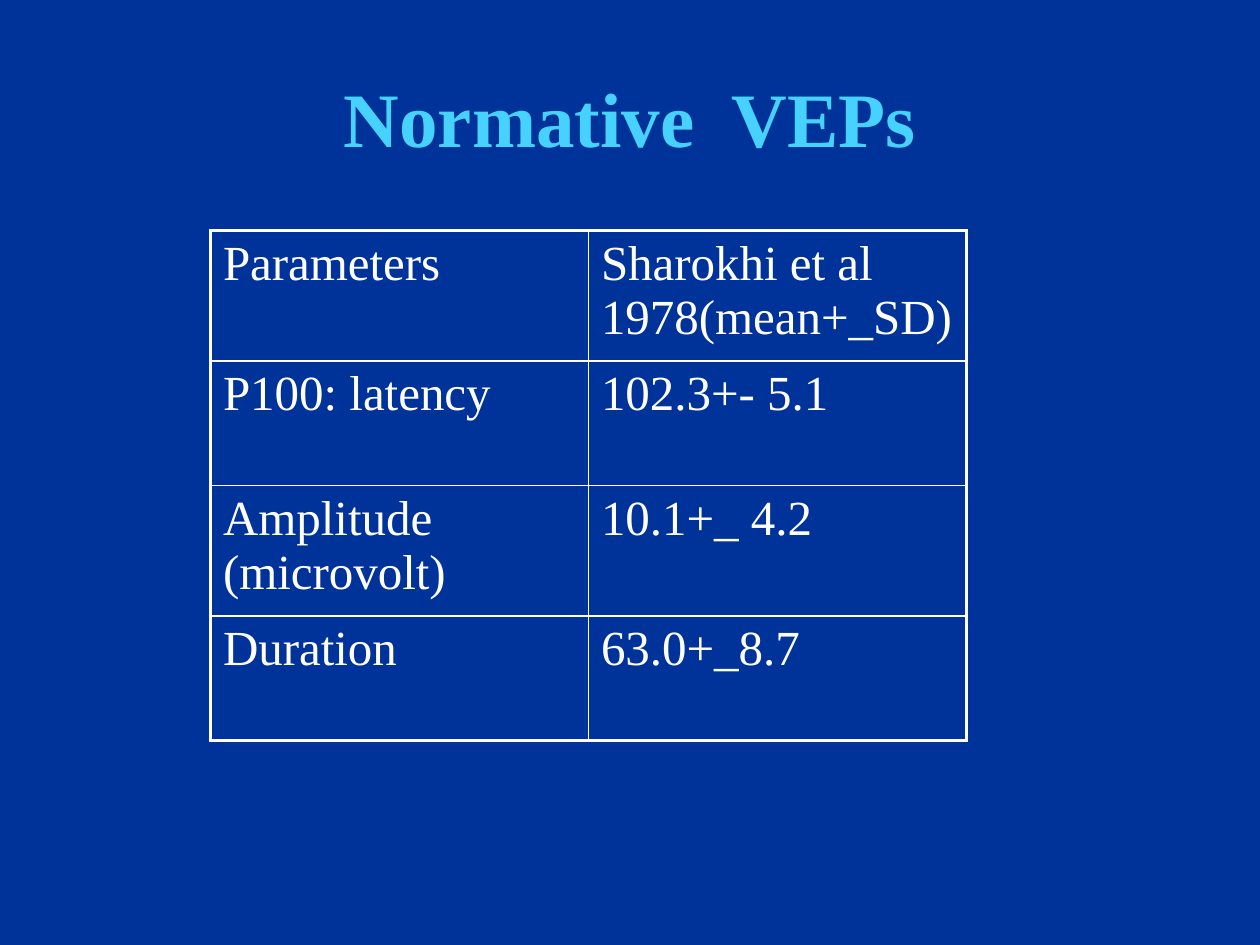
"""Build the slide with the table of normative VEP values."""
import pptx
import pptx.dml.color
import pptx.enum.text
import pptx.util
import lxml.etree
from pptx.oxml.ns import qn

TITLE = "Normative  VEPs"
ROWS = [
    ("Parameters", "Sharokhi et al 1978(mean+_SD)"),
    ("P100: latency", "102.3+- 5.1"),
    ("Amplitude (microvolt)", "10.1+_ 4.2"),
    ("Duration", "63.0+_8.7"),
]
FONT = "Times New Roman"
NAVY = pptx.dml.color.RGBColor(0x00, 0x33, 0x99)
SKY = pptx.dml.color.RGBColor(0x47, 0xD1, 0xFF)
WHITE = pptx.dml.color.RGBColor(0xFF, 0xFF, 0xFF)
OUTER_WIDTH, INNER_WIDTH = 2.25, 1
COLUMN_WIDTH, ROW_HEIGHT = 3, 0.99
TABLE_LEFT, TABLE_TOP = 1.67, 1.83


def add_run(paragraph, text, size, color, bold=False):
    run = paragraph.add_run()
    run.text = text
    run.font.name = FONT
    run.font.size = pptx.util.Pt(size)
    run.font.bold = bold
    run.font.color.rgb = color


def add_border(cell, side, width):
    properties = cell._tc.get_or_add_tcPr()
    line = lxml.etree.SubElement(properties, qn(f"a:ln{side}"), w=str(pptx.util.Pt(width)))
    fill = lxml.etree.SubElement(line, qn("a:solidFill"))
    lxml.etree.SubElement(fill, qn("a:srgbClr"), val=str(WHITE))


def add_title(slide):
    box = slide.shapes.add_textbox(*map(pptx.util.Inches, (0.5, 0.3, 9, 1.25)))
    frame = box.text_frame
    frame.word_wrap = True
    frame.vertical_anchor = pptx.enum.text.MSO_ANCHOR.MIDDLE
    paragraph = frame.paragraphs[0]
    paragraph.alignment = pptx.enum.text.PP_ALIGN.CENTER
    add_run(paragraph, TITLE, 44, SKY, bold=True)


def add_values_table(slide):
    row_count, column_count = len(ROWS), len(ROWS[0])
    bounds = (TABLE_LEFT, TABLE_TOP, column_count * COLUMN_WIDTH, row_count * ROW_HEIGHT)
    table = slide.shapes.add_table(row_count, column_count, *map(pptx.util.Inches, bounds)).table
    table.first_row = table.horz_banding = False
    for row, texts in enumerate(ROWS):
        for column, text in enumerate(texts):
            cell = table.cell(row, column)
            outer_sides = {
                "L": column == 0,
                "R": column == column_count - 1,
                "T": row == 0,
                "B": row == row_count - 1,
            }
            for side, is_outer in outer_sides.items():
                add_border(cell, side, OUTER_WIDTH if is_outer else INNER_WIDTH)
            cell.fill.background()
            add_run(cell.text_frame.paragraphs[0], text, 28, WHITE)


def main():
    presentation = pptx.Presentation()
    presentation.slide_width = pptx.util.Inches(10)
    presentation.slide_height = pptx.util.Inches(7.5)
    slide = presentation.slides.add_slide(presentation.slide_layouts[6])
    slide.background.fill.solid()
    slide.background.fill.fore_color.rgb = NAVY
    add_title(slide)
    add_values_table(slide)
    presentation.save("out.pptx")


if __name__ == "__main__":
    main()
